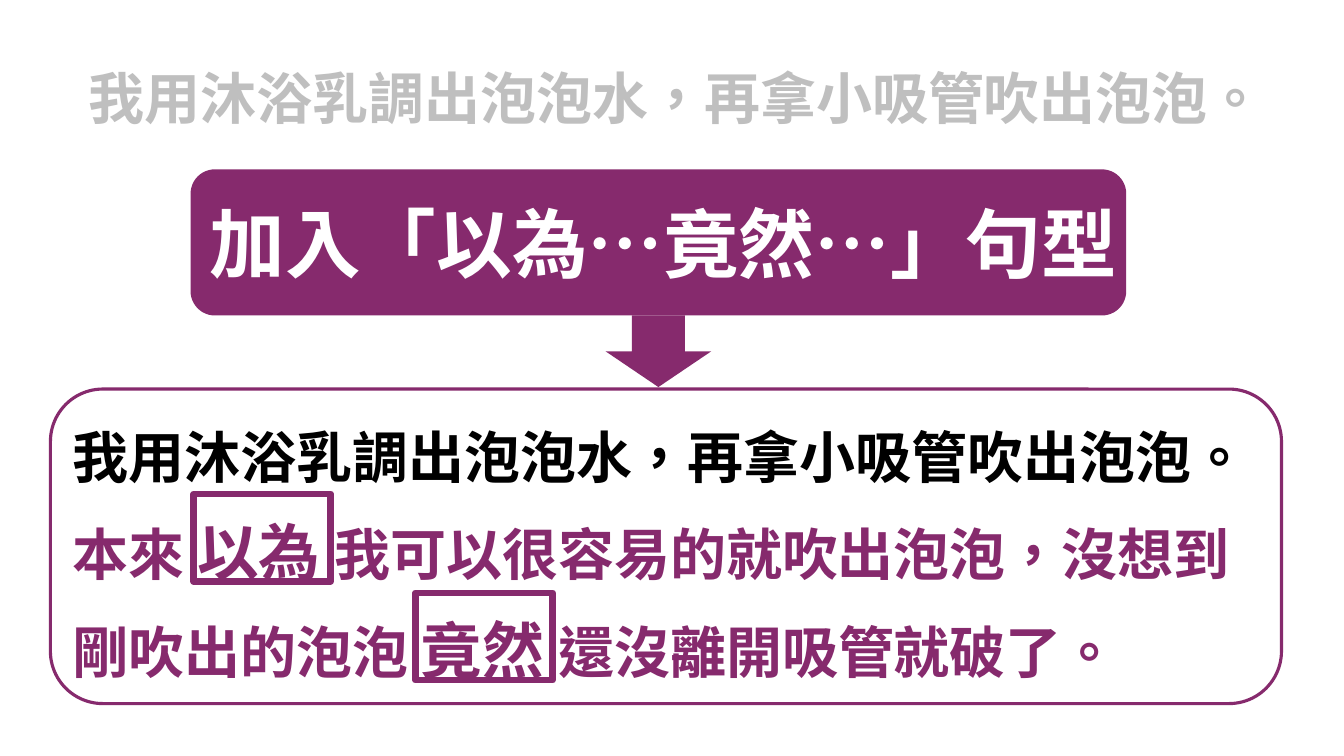
"""Build a slide that extends a sentence with the 以為…竟然… pattern."""
from lxml import etree
from pptx import Presentation
from pptx.dml.color import RGBColor
from pptx.enum.lang import MSO_LANGUAGE_ID
from pptx.enum.shapes import MSO_SHAPE
from pptx.enum.text import MSO_ANCHOR, MSO_AUTO_SIZE, PP_ALIGN
from pptx.oxml.ns import qn
from pptx.util import Inches, Pt

PURPLE = RGBColor(0x86, 0x2A, 0x6D)
GREY = RGBColor(0xBF, 0xBF, 0xBF)
BLACK = RGBColor(0, 0, 0)
WHITE = RGBColor(255, 255, 255)
FONT = "Noto Sans CJK SC"
CHINESE = MSO_LANGUAGE_ID.TRADITIONAL_CHINESE
ROUNDED, RECTANGLE = MSO_SHAPE.ROUNDED_RECTANGLE, MSO_SHAPE.RECTANGLE
DOWN_ARROW = MSO_SHAPE.DOWN_ARROW
TOP, LEFT, NO_FIT = MSO_ANCHOR.TOP, PP_ALIGN.LEFT, MSO_AUTO_SIZE.NONE

BODY, KEYWORD, HEADING = 40, 44, 54
SENTENCE = "我用沐浴乳調出泡泡水，再拿小吸管吹出泡泡。"
PATTERN = "加入「以為…竟然…」句型"
EXTENDED = [
    (SENTENCE, BODY, BLACK),
    ("本來 ", BODY, PURPLE),
    ("以為 ", KEYWORD, PURPLE),
    ("我可以很容易的就吹出泡泡，沒想到剛吹出的泡泡 ", BODY, PURPLE),
    ("竟然 ", KEYWORD, PURPLE),
    ("還沒離開吸管就破了。", BODY, PURPLE),
]

TEXT_WIDTH = 12.09
BANNER = (1.89, 1.68, 9.28, 1.45)
PANEL = (0.5, 3.86, 12.21, 3.12)
ARROW_WIDTH = 1.05
KEYWORD_SIZE = (1.36, 0.87)
KEYWORD_LEFTS = (1.92, 4.12)
KEYWORD_TOP, LINE_PITCH = 4.9, 0.98


def place(shape, area):
    shape.left, shape.top, shape.width, shape.height = map(Inches, area)


def write(box, spans, line_spacing=None):
    frame = box.text_frame
    frame.word_wrap = True
    frame.auto_size = NO_FIT
    frame.vertical_anchor = TOP
    para = frame.paragraphs[0]
    para.alignment = LEFT
    if line_spacing:
        para.line_spacing = Pt(line_spacing)
    for text, size, color in spans:
        span = para.add_run()
        span.text = text
        font = span.font
        font.name, font.size, font.bold = FONT, Pt(size), True
        font.color.rgb = color
        font.language_id = CHINESE
        latin = span._r.rPr.find(qn("a:latin"))
        latin.addnext(etree.Element(qn("a:ea"), typeface=FONT))


def add_text(page, area, spans, line_spacing=None):
    box = page.shapes.add_textbox(*map(Inches, area))
    write(box, spans, line_spacing)


def add_block(page, kind, area, line_width=None):
    shape = page.shapes.add_shape(kind, *map(Inches, area))
    shape.shadow.inherit = False
    if line_width:
        shape.fill.background()
        shape.line.color.rgb = PURPLE
        shape.line.width = Pt(line_width)
    else:
        shape.fill.solid()
        shape.fill.fore_color.rgb = PURPLE
        shape.line.fill.background()


def main():
    deck = Presentation()
    deck.slide_width, deck.slide_height = Inches(13.33), Inches(7.5)
    page = deck.slides.add_slide(deck.slide_layouts[5])

    title = page.shapes.title
    place(title, (0.78, 0.14, TEXT_WIDTH, 1.07))
    write(title, [(SENTENCE, BODY, GREY)], line_spacing=80)

    add_text(page, (0.62, 3.84, TEXT_WIDTH, 2.93), EXTENDED, line_spacing=70)

    left, top, width, height = BANNER
    add_block(page, ROUNDED, BANNER)
    add_text(page, (1.98, 1.9, 10.22, 1.01), [(PATTERN, HEADING, WHITE)])

    arrow_left = left + (width - ARROW_WIDTH) / 2
    arrow_top = top + height
    add_block(page, DOWN_ARROW, (arrow_left, arrow_top, ARROW_WIDTH, PANEL[1] - arrow_top - 0.02))

    for row, keyword_left in enumerate(KEYWORD_LEFTS):
        keyword_top = KEYWORD_TOP + row * LINE_PITCH
        add_block(page, RECTANGLE, (keyword_left, keyword_top, *KEYWORD_SIZE), line_width=4.5)
    add_block(page, ROUNDED, PANEL, line_width=2.25)

    deck.save("out.pptx")


if __name__ == "__main__":
    main()
